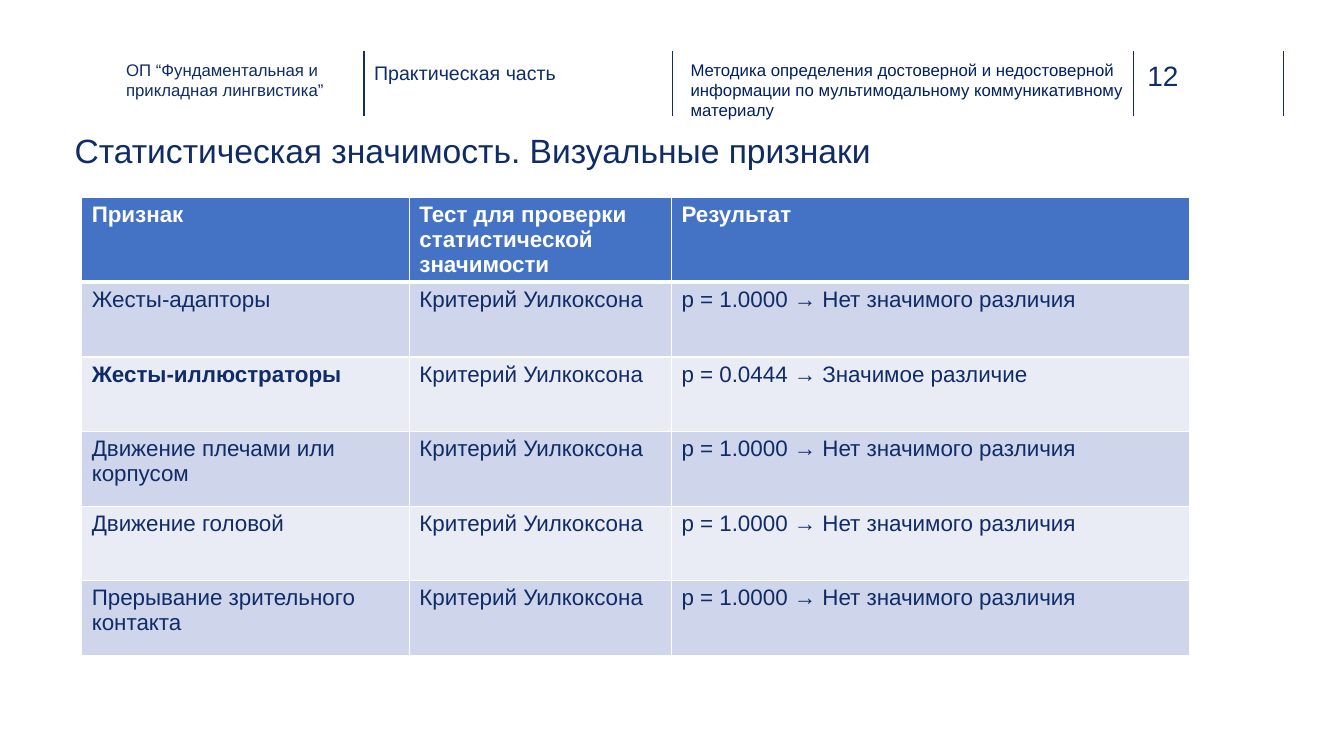
from lxml import etree
from pptx import Presentation
from pptx import util as u
from pptx.dml.color import RGBColor
from pptx.enum import shapes, text
from pptx.oxml.ns import qn

NAVY = RGBColor(0x0F, 0x2C, 0x68)
RULE = RGBColor(0x10, 0x2D, 0x69)
SECTION = RGBColor(0x0E, 0x2D, 0x69)
TOPIC = RGBColor(0x00, 0x20, 0x60)
WHITE = RGBColor(0xFF, 0xFF, 0xFF)
HEADER = RGBColor(0x44, 0x72, 0xC4)
BANDS = [RGBColor(0xE9, 0xEB, 0xF5), RGBColor(0xCF, 0xD5, 0xEA)]

TEST = "Критерий Уилкоксона"
NO_DIFFERENCE = "p = 1.0000 → Нет значимого различия"
SIGNIFICANT = "Жесты-иллюстраторы"
ROWS = [
    ("Признак", "Тест для проверки статистической значимости", "Результат"),
    ("Жесты-адапторы", TEST, NO_DIFFERENCE),
    (SIGNIFICANT, TEST, "p = 0.0444 → Значимое различие"),
    ("Движение плечами или корпусом", TEST, NO_DIFFERENCE),
    ("Движение головой", TEST, NO_DIFFERENCE),
    ("Прерывание зрительного контакта", TEST, NO_DIFFERENCE),
]


class Deck:
    font = "Arial"

    def __init__(self):
        self.prs = Presentation()
        self.prs.slide_width = u.Inches(13.33)
        self.prs.slide_height = u.Inches(7.5)
        self.s = self.prs.slides.add_slide(self.prs.slide_layouts[5])

    def x(self, percent):
        return round(self.prs.slide_width * percent / 100)

    def y(self, percent):
        return round(self.prs.slide_height * percent / 100)

    def box(self, left, top, width, height):
        return self.x(left), self.y(top), self.x(width), self.y(height)

    def add_words(self, tf, words, size, color, bold=False):
        p = tf.paragraphs[0]
        p.alignment = text.PP_ALIGN.LEFT
        r = p.add_run()
        r.text = words
        for name, value in dict(name=self.font, size=u.Pt(size), bold=bold).items():
            setattr(r.font, name, value)
        r.font.color.rgb = color

    def frame(self, sp, words, size, color, inset=None):
        tf = sp.text_frame
        style = dict(word_wrap=True, auto_size=text.MSO_AUTO_SIZE.NONE,
                     vertical_anchor=text.MSO_ANCHOR.TOP)
        if inset is not None:
            for side in ("left", "top", "right", "bottom"):
                style["margin_" + side] = inset
        for name, value in style.items():
            setattr(tf, name, value)
        self.add_words(tf, words, size, color)

    def title(self, area, words, size, color):
        sp = self.s.shapes.title
        for name, value in zip(("left", "top", "width", "height"), self.box(*area)):
            setattr(sp, name, value)
        self.frame(sp, words, size, color)

    def label(self, area, words, size, color, inset=0):
        sp = self.s.shapes.add_textbox(*self.box(*area))
        self.frame(sp, words, size, color, inset)

    def divider(self, x, top, bottom):
        line = self.s.shapes.add_connector(
            shapes.MSO_CONNECTOR.STRAIGHT,
            self.x(x), self.y(top), self.x(x), self.y(bottom))
        line.line.color.rgb = RULE
        line.line.width = u.Pt(1)
        etree.SubElement(line._element.spPr, qn("a:effectLst"))

    def borders(self, cell, **widths):
        tc_pr = cell._tc.get_or_add_tcPr()
        for side in "LRTB":
            ln = etree.SubElement(tc_pr, qn("a:ln" + side),
                                  w=str(u.Pt(widths.get(side, 1))))
            fill = etree.SubElement(ln, qn("a:solidFill"))
            etree.SubElement(fill, qn("a:srgbClr"), val=str(WHITE))

    def table(self, left, top, widths, row_height, rows):
        area = self.box(left, top, sum(widths), row_height * len(rows))
        tbl = self.s.shapes.add_table(len(rows), len(widths), *area).table
        tbl.horz_banding = False
        for column, width in zip(tbl.columns, widths):
            column.width = self.x(width)
        for i, row in enumerate(rows):
            tbl.rows[i].height = self.y(row_height)
            thick = {0: {"B": 3}, 1: {"T": 3}}.get(i, {})
            for j, words in enumerate(row):
                cell = tbl.cell(i, j)
                self.borders(cell, **thick)
                cell.fill.solid()
                cell.fill.fore_color.rgb = BANDS[i % 2] if i else HEADER
                self.add_words(cell.text_frame, words, 16, NAVY if i else WHITE,
                               i == 0 or words == SIGNIFICANT)


def main():
    deck = Deck()
    for x in (27.08, 50.04, 84.32, 95.5):
        deck.divider(x, 6.8, 15.33)
    deck.label((85.37, 7.73, 5.48, 4.53), "12", 20, RULE)
    deck.label((9.38, 7.87, 15.6, 6), "ОП “Фундаментальная и прикладная лингвистика”", 12, NAVY)
    deck.label((27.83, 8, 16.95, 6), "Практическая часть", 14, SECTION)
    deck.label((50.64, 7.2, 33.98, 9.47),
               "Методика определения достоверной и недостоверной информации "
               "по мультимодальному коммуникативному материалу", 12, TOPIC, inset=None)
    deck.table(6.08, 26.13, (24.38, 19.5, 38.56), 9.87, ROWS)
    deck.title((4.8, 16.53, 77.27, 6.67),
               "Статистическая значимость. Визуальные признаки", 24, NAVY)
    deck.prs.save("out.pptx")


if __name__ == "__main__":
    main()
